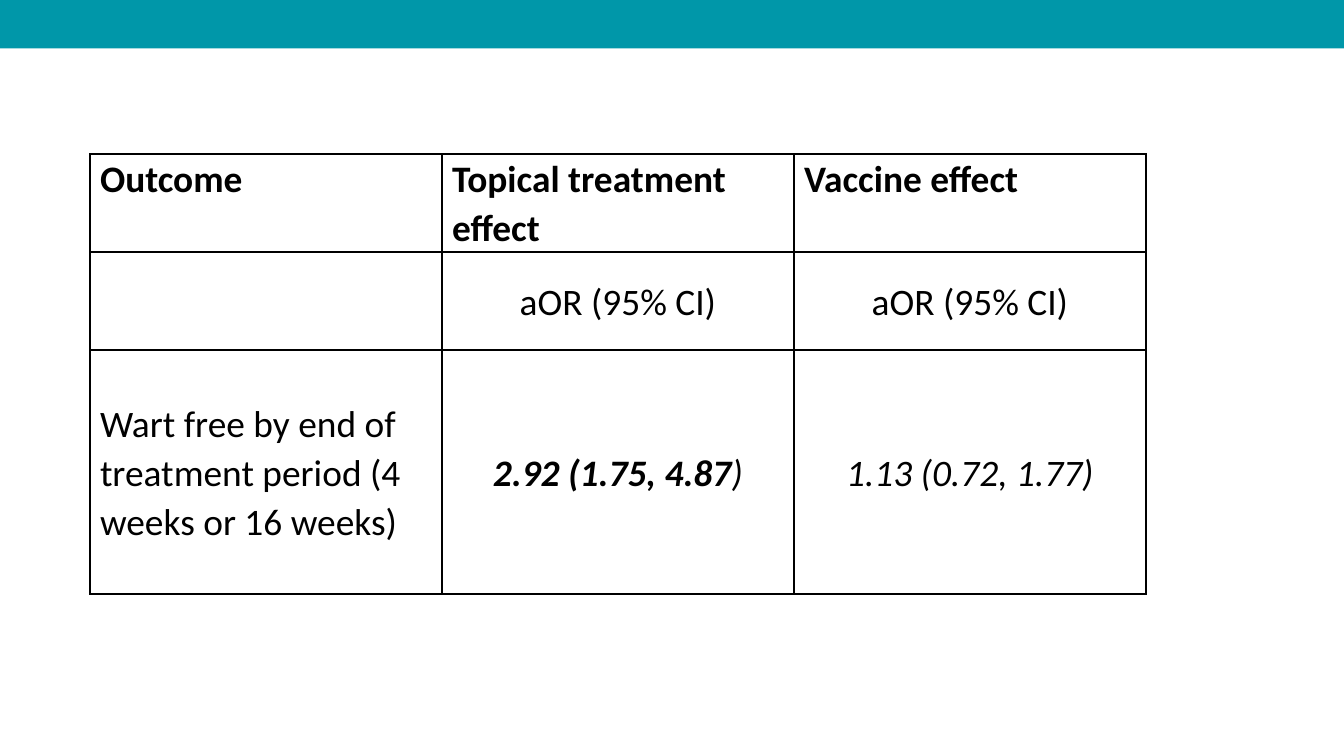
from lxml.etree import SubElement
from pptx import Presentation
from pptx.dml.color import RGBColor
from pptx.enum.shapes import MSO_SHAPE
from pptx.enum.text import MSO_ANCHOR, PP_ALIGN
from pptx.oxml.ns import qn
from pptx.util import Pt

COLORS = {"band": "0097A9", "text": "000000", "border": "000000", "cell": "FFFFFF"}
FONT = "Calibri"
COLUMN_WIDTH = 188.6
ROW_HEIGHTS = [52.3, 52.5, 130.7]
OUTCOMES = [
    ["Outcome", "Topical treatment effect", "Vaccine effect"],
    ["", "aOR (95% CI)", "aOR (95% CI)"],
    ["Wart free by end of treatment period (4 weeks or 16 weeks)",
     "2.92 (1.75, 4.87", "1.13 (0.72, 1.77)"],
]


def color(name):
    """Return the named colour."""
    return RGBColor.from_string(COLORS[name])


def add_band(slide, width):
    """Draw the band along the top edge."""
    band = slide.shapes.add_shape(MSO_SHAPE.RECTANGLE, 0, 0, width, Pt(26))
    band.shadow.inherit = False
    band.fill.solid()
    band.fill.fore_color.rgb = color("band")
    band.line.fill.background()


def add_borders(cell):
    """Give all four sides of a cell a thin solid line."""
    properties = cell._tc.get_or_add_tcPr()
    for position, side in enumerate(("a:lnL", "a:lnR", "a:lnT", "a:lnB")):
        border = SubElement(properties, qn(side), w=str(Pt(1)))
        properties.insert(position, border)
        fill = SubElement(border, qn("a:solidFill"))
        SubElement(fill, qn("a:srgbClr"), val=COLORS["border"])


def format_run(run, bold=False, italic=False):
    """Apply the table font to a run."""
    run.font.name = FONT
    run.font.size = Pt(20)
    run.font.bold = bold
    run.font.italic = italic
    run.font.color.rgb = color("text")


def fill_cell(cell, text, header, centered, italic, bold):
    """Write and format one cell."""
    cell.fill.solid()
    cell.fill.fore_color.rgb = color("cell")
    add_borders(cell)
    cell.margin_left = cell.margin_right = Pt(5.4)
    cell.margin_top = cell.margin_bottom = 0
    cell.vertical_anchor = MSO_ANCHOR.TOP if header else MSO_ANCHOR.MIDDLE
    paragraph = cell.text_frame.paragraphs[0]
    paragraph.text = text
    paragraph.line_spacing = 1.07
    paragraph.alignment = PP_ALIGN.CENTER if centered else PP_ALIGN.LEFT
    for run in paragraph.runs:
        format_run(run, bold, italic)


def add_outcome_table(slide):
    """Build the table of treatment and vaccine effects."""
    rows, columns = len(OUTCOMES), len(OUTCOMES[0])
    table = slide.shapes.add_table(
        rows, columns, Pt(48.2), Pt(82.6),
        Pt(COLUMN_WIDTH * columns), Pt(sum(ROW_HEIGHTS))).table
    for column in table.columns:
        column.width = Pt(COLUMN_WIDTH)
    for row_index, (height, outcome) in enumerate(zip(ROW_HEIGHTS, OUTCOMES)):
        table.rows[row_index].height = Pt(height)
        header = row_index == 0
        for column_index, text in enumerate(outcome):
            estimate = row_index == 2 and column_index > 0
            fill_cell(table.cell(row_index, column_index), text, header,
                      centered=not header and column_index > 0, italic=estimate,
                      bold=header or (estimate and column_index == 1))
    closing_bracket = table.cell(2, 1).text_frame.paragraphs[0].add_run()
    closing_bracket.text = ")"
    format_run(closing_bracket, italic=True)


def main():
    """Build and save the slide."""
    presentation = Presentation()
    presentation.slide_width, presentation.slide_height = Pt(720), Pt(405)
    slide = presentation.slides.add_slide(presentation.slide_layouts[6])
    add_band(slide, presentation.slide_width)
    add_outcome_table(slide)
    presentation.save("out.pptx")


if __name__ == "__main__":
    main()
